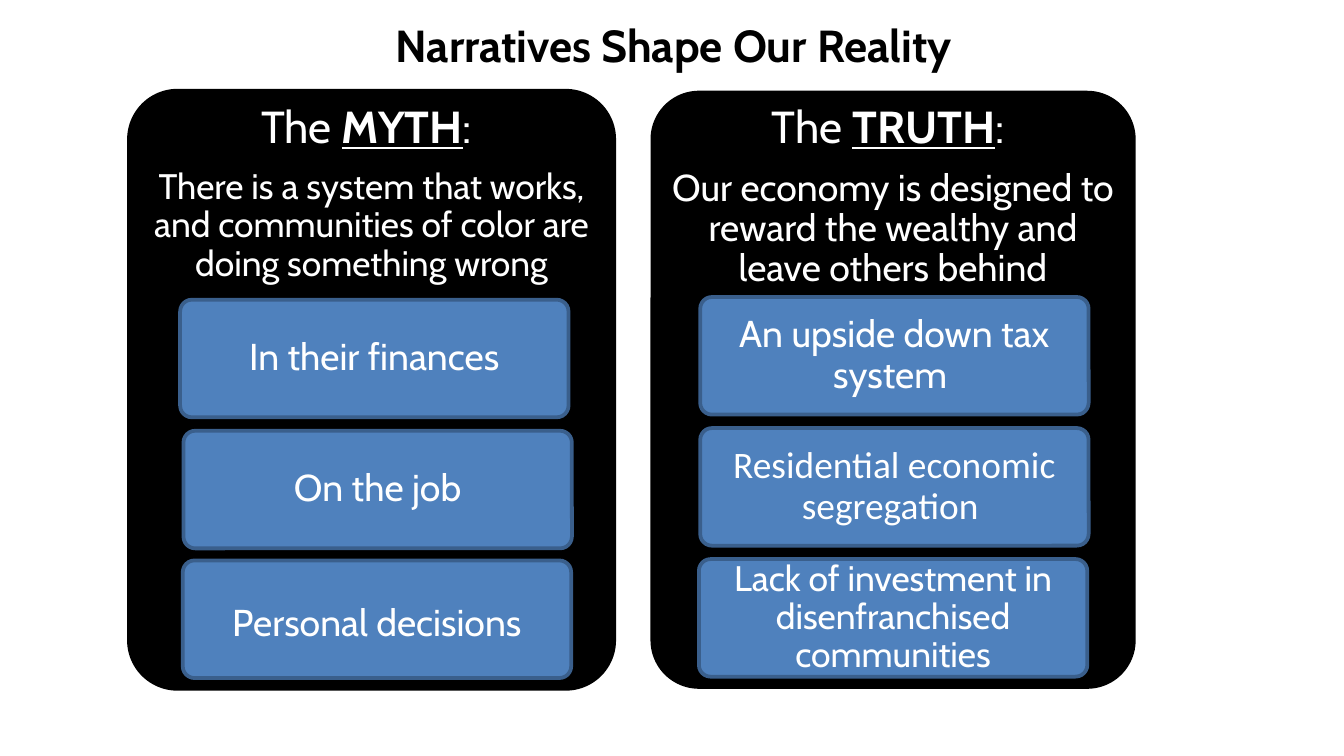
from dataclasses import dataclass

from pptx import Presentation
from pptx.dml.color import RGBColor
from pptx.enum.shapes import MSO_SHAPE
from pptx.enum.text import MSO_ANCHOR, PP_ALIGN
from pptx.shapes.autoshape import Shape
from pptx.slide import Slide
from pptx.text.text import TextFrame, _Paragraph
from pptx.util import Pt

SCALE = 4572


def px(n: int) -> int:
    return n * SCALE


@dataclass(frozen=True)
class Theme:
    black: RGBColor = RGBColor(0, 0, 0)
    white: RGBColor = RGBColor(255, 255, 255)
    blue: RGBColor = RGBColor(0x4F, 0x81, 0xBD)
    edge: RGBColor = RGBColor(0x3A, 0x5F, 0x8C)
    font: str = "Cabin"
    alt: str = "Calibri"
    head: int = 24
    body: int = 20
    small: int = 19
    line: int = 2
    pitch: float = 0.9
    gap: float = 8.4


THEME = Theme()


@dataclass(frozen=True)
class Card:
    text: str
    left: int
    top: int
    size: int = THEME.body
    font: str = THEME.font
    drop: int = 0


@dataclass(frozen=True)
class Panel:
    left: int
    word: str
    claim: str
    size: int
    edge: bool
    cards: tuple[Card, ...]


PANELS = (
    Panel(
        192, "MYTH",
        "There is a system that works, and communities of color are doing something wrong",
        THEME.small, True,
        (
            Card("In their finances", 268, 446),
            Card("On the job", 273, 641),
            Card("Personal decisions", 272, 834, drop=14),
        ),
    ),
    Panel(
        968, "TRUTH",
        "Our economy is designed to reward the wealthy and leave others behind",
        THEME.body, False,
        (
            Card("An upside down tax system ", 1042, 442),
            Card("Residential economic segregation ", 1042, 637, font=THEME.alt),
            Card("Lack of investment in disenfranchised communities", 1040, 832, THEME.small),
        ),
    ),
)


def add_run(para: _Paragraph, text: str, size: int, color: RGBColor = THEME.white,
            font: str = THEME.font, bold: bool = False, under: bool = False) -> None:
    run = para.add_run()
    run.text = text
    run.font.name = font
    run.font.size = Pt(size)
    run.font.color.rgb = color
    run.font.bold = bold
    run.font.underline = under


def set_para(para: _Paragraph, after: float = 0) -> None:
    para.alignment = PP_ALIGN.CENTER
    para.line_spacing = THEME.pitch
    para.space_before = Pt(0)
    para.space_after = Pt(after)


def set_frame(frame: TextFrame, anchor: MSO_ANCHOR, side: int, top: int, base: int) -> None:
    frame.word_wrap = True
    frame.vertical_anchor = anchor
    frame.margin_left = frame.margin_right = px(side)
    frame.margin_top, frame.margin_bottom = px(top), px(base)


def add_box(slide: Slide, left: int, top: int, wide: int, high: int,
            fill: RGBColor, edge: RGBColor | None) -> Shape:
    box = slide.shapes.add_shape(
        MSO_SHAPE.ROUNDED_RECTANGLE, px(left), px(top), px(wide), px(high))
    box.adjustments[0] = 0.1
    box.shadow.inherit = False
    box.fill.solid()
    box.fill.fore_color.rgb = fill
    if edge is None:
        box.line.fill.background()
    else:
        box.line.color.rgb = edge
        box.line.width = Pt(THEME.line)
    return box


def draw_card(slide: Slide, card: Card) -> None:
    box = add_box(slide, card.left, card.top, 578, 175, THEME.blue, THEME.edge)
    frame = box.text_frame
    set_frame(frame, MSO_ANCHOR.MIDDLE, 12, 8 + card.drop, 8)
    para = frame.paragraphs[0]
    set_para(para)
    add_run(para, card.text, card.size, font=card.font)


def draw_panel(slide: Slide, panel: Panel) -> None:
    edge = THEME.black if panel.edge else None
    box = add_box(slide, panel.left, 135, 722, 890, THEME.black, edge)
    frame = box.text_frame
    set_frame(frame, MSO_ANCHOR.TOP, 0, 0, 0)
    head = frame.paragraphs[0]
    set_para(head, THEME.gap)
    add_run(head, "The ", THEME.head)
    add_run(head, panel.word, THEME.head, bold=True, under=True)
    add_run(head, ": ", THEME.head)
    claim = frame.add_paragraph()
    set_para(claim)
    add_run(claim, panel.claim, panel.size)
    for card in panel.cards:
        draw_card(slide, card)


def draw_title(slide: Slide) -> None:
    title = slide.shapes.title
    title.left, title.top = px(37), px(-24)
    title.width, title.height = px(1946), px(180)
    frame = title.text_frame
    set_frame(frame, MSO_ANCHOR.MIDDLE, 20, 10, 10)
    para = frame.paragraphs[0]
    para.alignment = PP_ALIGN.CENTER
    add_run(para, "Narratives Shape Our Reality ", THEME.head, THEME.black, bold=True)


def main() -> None:
    deck = Presentation()
    deck.slide_width, deck.slide_height = px(2000), px(1125)
    slide = deck.slides.add_slide(deck.slide_layouts[5])
    draw_title(slide)
    for panel in PANELS:
        draw_panel(slide, panel)
    deck.save("out.pptx")


if __name__ == "__main__":
    main()
